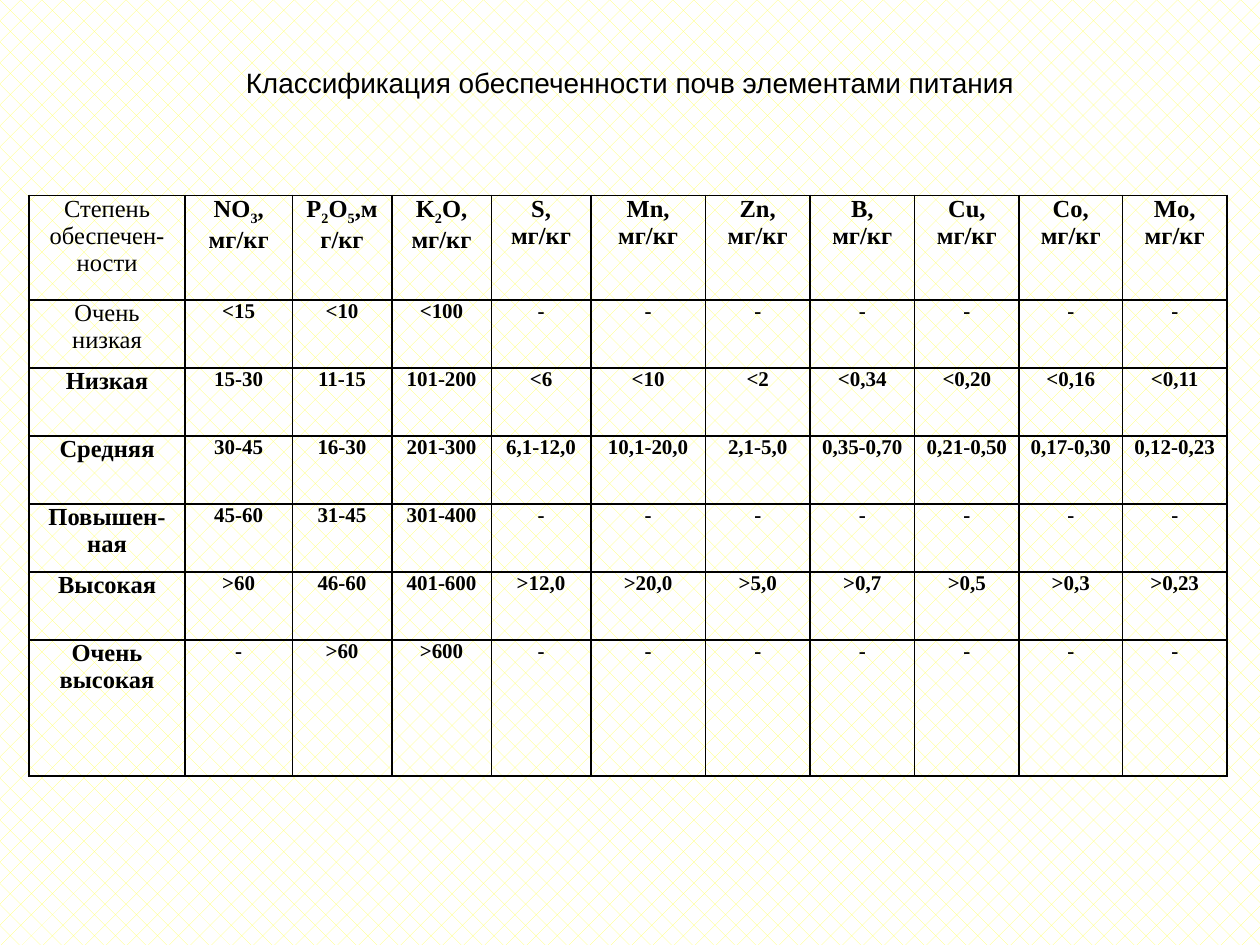
"""Build a slide with a table of soil nutrient supply classes."""
from itertools import groupby

from lxml.etree import SubElement
from pptx import Presentation
from pptx.dml.color import RGBColor
from pptx.enum.dml import MSO_PATTERN
from pptx.enum.text import MSO_ANCHOR, PP_ALIGN
from pptx.oxml.ns import qn
from pptx.util import Inches, Pt


def color(code):
    return RGBColor.from_string(code)


def style(par, face, size, bold):
    par.alignment = PP_ALIGN.CENTER
    par.font.name = face
    par.font.size = Pt(size)
    par.font.bold = bold
    par.font.color.rgb = color("000000")


HEADS = ["Степень обеспечен-ности", "NO3,\nмг/кг", "P2O5,мг/кг", "K2O,\nмг/кг"]
HEADS += [f"{name},\nмг/кг" for name in "S Mn Zn B Cu Co Mo".split()]
LEVELS = {
    "Очень низкая": "<15 <10 <100 - - - - - - -",
    "Низкая": "15-30 11-15 101-200 <6 <10 <2 <0,34 <0,20 <0,16 <0,11",
    "Средняя": "30-45 16-30 201-300 6,1-12,0 10,1-20,0 2,1-5,0 "
               "0,35-0,70 0,21-0,50 0,17-0,30 0,12-0,23",
    "Повышен-ная": "45-60 31-45 301-400 - - - - - - -",
    "Высокая": ">60 46-60 401-600 >12,0 >20,0 >5,0 >0,7 >0,5 >0,3 >0,23",
    "Очень высокая": "- >60 >600 - - - - - - -",
}
ROWS = [HEADS] + [[level] + values.split() for level, values in LEVELS.items()]
WIDTHS = [1.24, 0.85] + [0.79] * 3 + [0.91] + [0.83] * 3 + [0.82, 0.83]
HEIGHTS = [0.83] + [0.54] * 5 + [1.08]

deck = Presentation()
deck.slide_width, deck.slide_height = Inches(10), Inches(7.5)
slide = deck.slides.add_slide(deck.slide_layouts[5])
back = slide.background.fill
back.patterned()
back.pattern = MSO_PATTERN.DIAGONAL_BRICK
back.fore_color.rgb = color("FFFF66")
back.back_color.rgb = color("FFFFFF")

title = slide.shapes.title
title.left, title.top = Inches(0.5), Inches(0.3)
title.width, title.height = Inches(9), Inches(0.7)
title.text = "Классификация обеспеченности почв элементами питания"
title.text_frame.vertical_anchor = MSO_ANCHOR.MIDDLE
style(title.text_frame.paragraphs[0], "Arial", 16, False)

table = slide.shapes.add_table(
    len(ROWS), len(WIDTHS), Inches(0.23), Inches(1.55),
    Inches(sum(WIDTHS)), Inches(sum(HEIGHTS))).table
table.first_row = table.horz_banding = False
for column, width in zip(table.columns, WIDTHS):
    column.width = Inches(width)
for row, height in zip(table.rows, HEIGHTS):
    row.height = Inches(height)

for r, texts in enumerate(ROWS):
    for c, text in enumerate(texts):
        cell = table.cell(r, c)
        cell.margin_left = cell.margin_right = Inches(0.07)
        cell.margin_top = cell.margin_bottom = 0
        props = cell._tc.get_or_add_tcPr()
        for side in ("lnL", "lnR", "lnT", "lnB"):
            line = SubElement(props, qn(f"a:{side}"), w=str(Pt(1)))
            paint = SubElement(line, qn("a:solidFill"))
            SubElement(paint, qn("a:srgbClr"), val="000000")
        cell.fill.background()
        size = 14 if r == 0 or c == 0 else 12
        bold = c > 0 or r > 1
        frame = cell.text_frame
        for n, part in enumerate(text.split("\n")):
            par = frame.add_paragraph() if n else frame.paragraphs[0]
            style(par, "Times New Roman", size, bold)
            if r:
                par.add_run().text = part
                continue
            for low, chars in groupby(part, str.isdigit):
                run = par.add_run()
                run.text = "".join(chars)
                if low:
                    run._r.get_or_add_rPr().set("baseline", "-25000")

deck.save("out.pptx")
